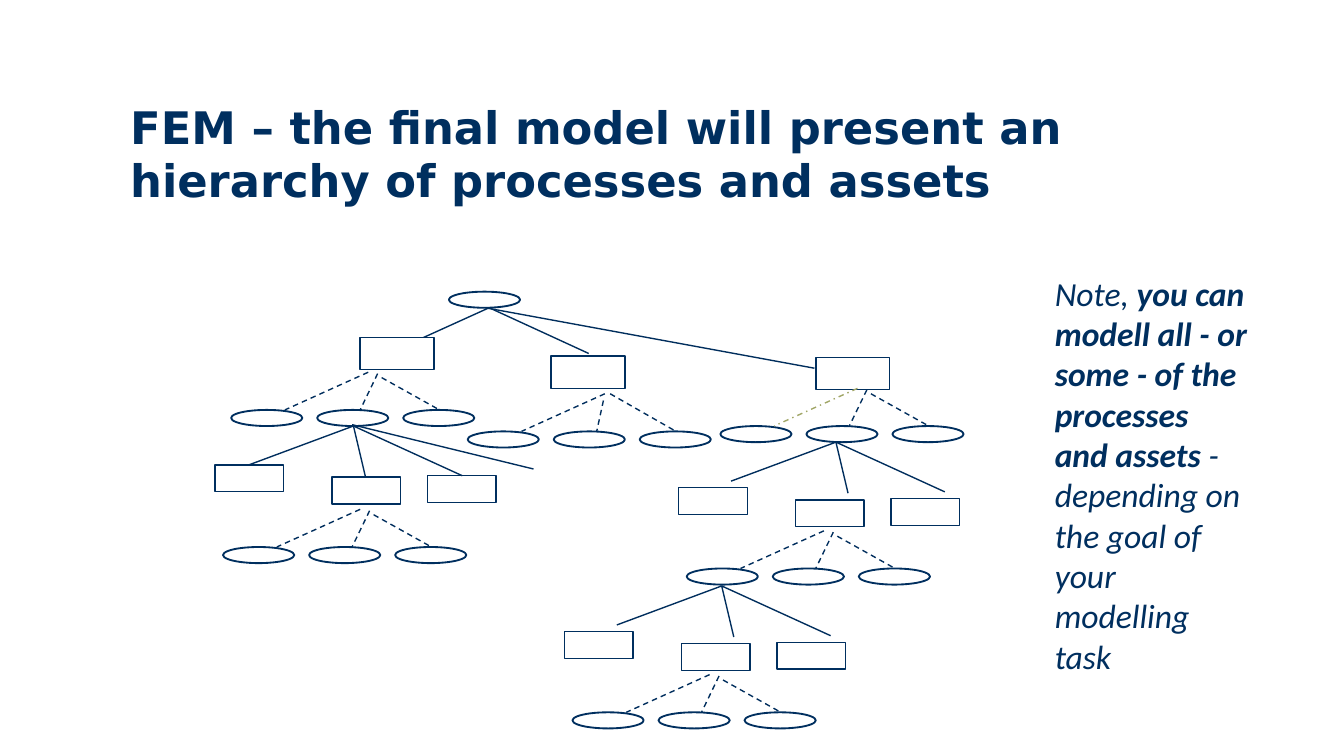
from pptx import Presentation
from pptx.dml.color import RGBColor
from pptx.enum.dml import MSO_LINE
from pptx.enum.shapes import MSO_CONNECTOR, MSO_SHAPE
from pptx.enum.text import MSO_ANCHOR
from pptx.oxml.ns import qn
from pptx.util import Inches, Pt

NAVY, LINE_BLUE, OLIVE, WHITE = "002F5F", "002E5D", "A1A667", "FFFFFF"

TITLE = [("FEM – the final model will present an hierarchy of processes and assets", True)]
NOTE = [
    ("Note, ", False),
    ("you can modell all - or some - of the processes and assets ", True),
    ("- depending on the goal of your modelling task", False),
]

PROCESS = (0.53, 0.12)      # ellipse
ASSET = (0.55, 0.24)        # upper rectangle
SUB_ASSET = (0.51, 0.20)    # lower rectangle

ROOT = (3.34, 2.17)
ROOT_LINES = [((3.64, 2.29), (3.11, 2.53)), ((3.64, 2.29), (4.38, 2.63)),
              ((3.61, 2.29), (6.06, 2.74))]
ASSETS = [(2.68, 2.51), (4.10, 2.65), (6.07, 2.66)]

# Each fan of processes hangs below an asset; offsets count from its left ellipse.
PROCESS_STEP = 0.64
FAN_STARTS = [(1.02, -0.28), (1.09, -0.27), (1.12, -0.24)]
MIDDLE_STARTS = [(1.02, -0.28), (1.01, -0.23), (1.06, -0.28)]
FAN_ENDS = [0.40, 0.96, 1.55]
PROCESS_FANS = [
    ((1.72, 3.05), FAN_STARTS, LINE_BLUE),
    ((3.48, 3.21), MIDDLE_STARTS, LINE_BLUE),
    ((5.36, 3.17), FAN_STARTS, OLIVE),
    ((1.66, 4.07), FAN_STARTS, LINE_BLUE),
    ((5.11, 4.23), FAN_STARTS, LINE_BLUE),
    ((4.26, 5.30), FAN_STARTS, LINE_BLUE),
]

# Each fan of assets: left rectangle, and the point where its lines meet.
ASSET_OFFSETS = [(0, 0), (0.87, 0.09), (1.58, 0.08)]
BRANCHES = [(-0.78, 0.29), (0.09, 0.38), (0.81, 0.37)]
ASSET_FANS = [((1.60, 3.46), (2.63, 3.17)),
              ((5.05, 3.63), (6.22, 3.29)),
              ((4.20, 4.70), (5.37, 4.36))]
OPEN_BRANCH = ((2.62, 3.16), (3.97, 3.49))


def color(value):
    return RGBColor.from_string(value)


def shift(point, offset):
    return point[0] + offset[0], point[1] + offset[1]


def add_node(page, kind, corner, size, width=0.75):
    node = page.shapes.add_shape(kind, *map(Inches, corner + size))
    node.shadow.inherit = False
    node.fill.solid()
    node.fill.fore_color.rgb = color(WHITE)
    node.line.color.rgb = color(NAVY)
    node.line.width = Pt(width)


def add_process(page, corner):
    add_node(page, MSO_SHAPE.OVAL, corner, PROCESS, 1)


def add_line(page, start, end, tint=LINE_BLUE, dash=None):
    line = page.shapes.add_connector(MSO_CONNECTOR.STRAIGHT, *map(Inches, start + end))
    line.line.color.rgb = color(tint)
    line.line.width = Pt(0.75)
    if dash:
        line.line.dash_style = dash
    properties = line._element.spPr
    properties.append(properties.makeelement(qn("a:effectLst"), {}))


def add_text(page, area, pieces, font, size, italic=False):
    """Add a wrapped box; pieces are (text, bold) pairs of one paragraph."""
    box = page.shapes.add_textbox(*map(Inches, area))
    frame = box.text_frame
    frame.word_wrap = True
    frame.vertical_anchor = MSO_ANCHOR.TOP
    for text, bold in pieces:
        span = frame.paragraphs[0].add_run()
        span.text = text
        span.font.name = font
        span.font.size = Pt(size)
        span.font.bold = bold
        span.font.italic = italic
        span.font.color.rgb = color(NAVY)


def add_process_fan(page, left, starts, first_tint):
    for index, (start, end) in enumerate(zip(starts, FAN_ENDS)):
        add_process(page, shift(left, (index * PROCESS_STEP, 0)))
        tint = first_tint if index == 0 else LINE_BLUE
        dash = MSO_LINE.DASH_DOT if tint == OLIVE else MSO_LINE.DASH
        add_line(page, shift(left, start), shift(left, (end, 0)), tint, dash)


def add_asset_fan(page, left, apex):
    for offset, branch in zip(ASSET_OFFSETS, BRANCHES):
        add_node(page, MSO_SHAPE.RECTANGLE, shift(left, offset), SUB_ASSET)
        add_line(page, apex, shift(apex, branch))


def main():
    deck = Presentation()
    deck.slide_width = Inches(10)
    deck.slide_height = deck.slide_width * 9 // 16
    page = deck.slides.add_slide(deck.slide_layouts[6])

    add_text(page, (0.87, 0.69, 7.49, 0.65), TITLE, "DejaVu Sans", 24)
    add_process(page, ROOT)
    for start, end in ROOT_LINES:
        add_line(page, start, end)
    for corner in ASSETS:
        add_node(page, MSO_SHAPE.RECTANGLE, corner, ASSET)
    for fan in PROCESS_FANS:
        add_process_fan(page, *fan)
    for fan in ASSET_FANS:
        add_asset_fan(page, *fan)
    add_line(page, *OPEN_BRANCH)
    add_text(page, (7.75, 1.98, 1.63, 3.13), NOTE, "Calibri", 18, italic=True)

    deck.save("out.pptx")


if __name__ == "__main__":
    main()
